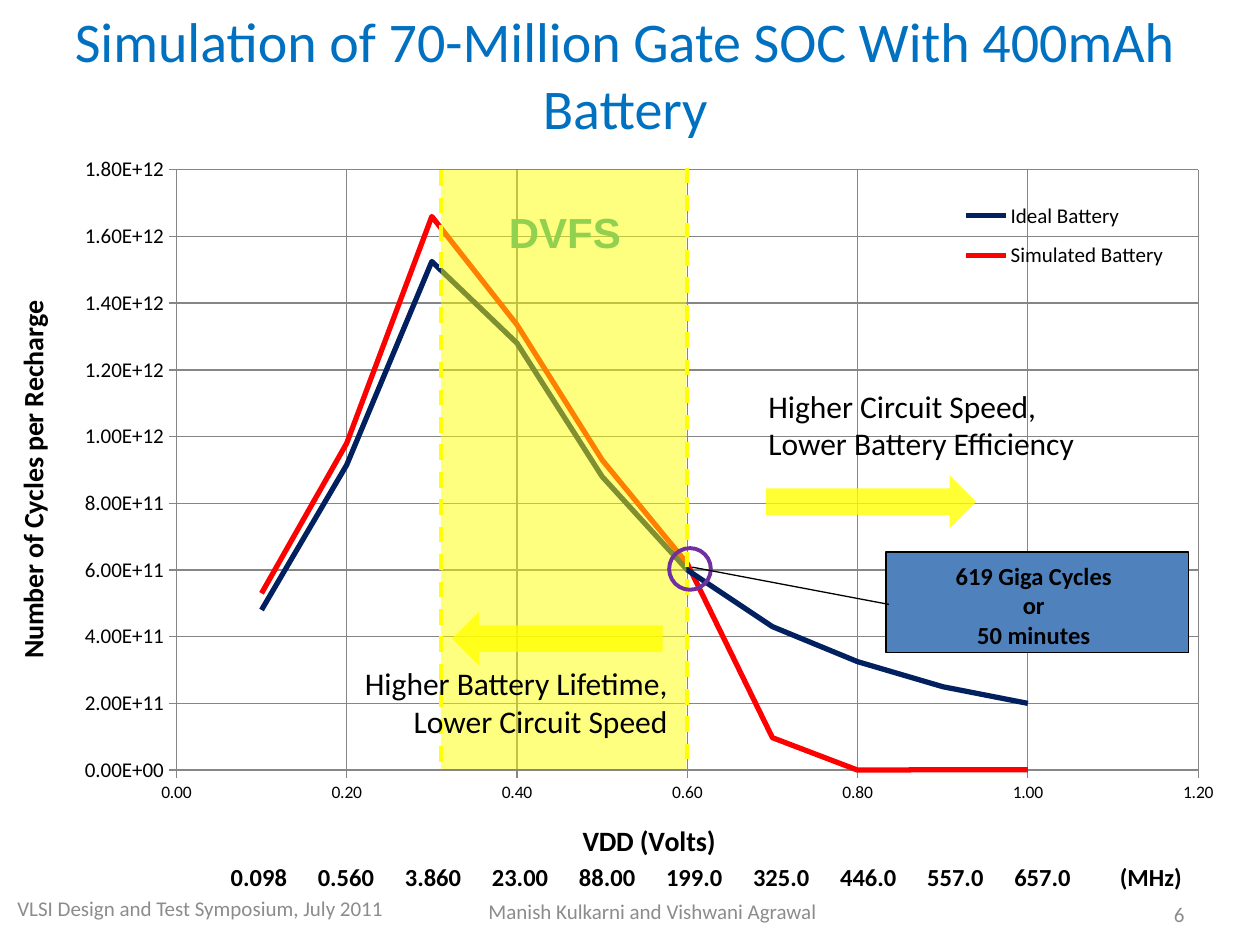
from lxml import etree
from pptx import Presentation, util as u
from pptx.chart.data import XyChartData
from pptx.dml.color import RGBColor
from pptx.enum import chart as charts, dml, shapes, text
from pptx.oxml.ns import qn

# Content: positions in cm, text sizes in points
VOLTS = [0.1, 0.2, 0.3, 0.4, 0.5, 0.6, 0.7, 0.8, 0.9, 1.0]
GIGA = 1e9
SERIES = [  # name, colour, giga cycles per recharge
    ("Ideal Battery", "002060", [480, 915, 1525, 1280, 880, 600, 430, 325, 250, 200]),
    ("Simulated Battery", "FF0000", [530, 980, 1660, 1335, 930, 619, 97, 0, 1, 1]),
]
FREQUENCIES = ["0.098", "0.560", "3.860", "23.00", "88.00", "199.0",
               "325.0", "446.0", "557.0", "657.0"]
FIRST_TAB, TAB_STEP, UNIT_TAB = 0.78, 1.755, 18.76

LEFT, CENTER, RIGHT = text.PP_ALIGN.LEFT, text.PP_ALIGN.CENTER, text.PP_ALIGN.RIGHT
GRAY, YELLOW, BLACK = "8C8C8C", "FFFF00", "000000"
FOOTERS = [  # text, place, alignment
    ("VLSI Design and Test Symposium, July 2011", (0.1, 17.68, 8.26, 1.27), LEFT),
    ("6", (18.2, 17.8, 5.93, 1.27), RIGHT),
    ("Manish Kulkarni and Vishwani Agrawal", (9.27, 17.86, 7.77, 1.02), CENTER),
]
TITLE = "Simulation of 70-Million Gate SOC With 400mAh Battery"
ZONE = (8.89, 3.43, 4.95, 12.07)
ZONE_EDGES = [(8.89, 3.43), (13.84, 3.38)]
ARROWS = [
    (shapes.MSO_SHAPE.RIGHT_ARROW, (15.44, 9.58, 4.24, 1.07)),
    (shapes.MSO_SHAPE.LEFT_ARROW, (9.12, 12.34, 4.24, 1.07)),
]
NOTES = [
    (["Higher Circuit Speed,", "Lower Battery Efficiency"], (15.24, 7.67, 7.82, 1.8), LEFT),
    (["Higher Battery Lifetime,", "Lower Circuit Speed"], (5.89, 13.26, 7.82, 1.8), RIGHT),
]
RESULT = ["619 Giga Cycles", "or", "50 minutes"]


def color(value):
    return RGBColor.from_string(value)


def place(position):
    return [u.Cm(length) for length in position]


def style(font, size, shade=BLACK, bold=False, name="Calibri"):
    font.size, font.bold, font.name = u.Pt(size), bold, name
    font.color.rgb = color(shade)


def add_text(lines, position, size, shade=BLACK, bold=False, align=LEFT,
             name="Calibri", anchor=text.MSO_ANCHOR.TOP):
    frame = page.shapes.add_textbox(*place(position)).text_frame
    frame.word_wrap = True
    frame.vertical_anchor = anchor
    for index, line in enumerate(lines):
        para = frame.paragraphs[0] if index == 0 else frame.add_paragraph()
        para.text = line
        para.alignment = align
        style(para.font, size, shade, bold, name)
    return frame


def add_shape(kind, position, fill=None, opacity=100, line=None, width=1):
    shape = page.shapes.add_shape(kind, *place(position))
    shape.shadow.inherit = False
    if fill:
        shape.fill.solid()
        shape.fill.fore_color.rgb = color(fill)
        if opacity < 100:
            node = shape.fill._xPr.find(".//" + qn("a:srgbClr"))
            etree.SubElement(node, qn("a:alpha"), val=str(opacity * 1000))
    else:
        shape.fill.background()
    if line:
        shape.line.color.rgb = color(line)
        shape.line.width = u.Pt(width)
    else:
        shape.line.fill.background()
    return shape


def set_layout(parent, x, y, w, h, inner=False):
    """Place a chart part by fractions of the chart's size."""
    for old in parent.findall(qn("c:layout")):
        parent.remove(old)
    layout = etree.Element(qn("c:layout"))
    manual = etree.SubElement(layout, qn("c:manualLayout"))
    values = [("layoutTarget", "inner")] if inner else []
    values += [("xMode", "edge"), ("yMode", "edge"), ("x", x), ("y", y), ("w", w), ("h", h)]
    for tag, value in values:
        etree.SubElement(manual, qn("c:" + tag), val=str(value))
    parent.insert(0 if inner else 1, layout)


def format_axis(axis, title, size, maximum, step, number_format):
    axis.minimum_scale, axis.maximum_scale, axis.major_unit = 0, maximum, step
    axis.has_major_gridlines = True
    axis.major_tick_mark = charts.XL_TICK_MARK.OUTSIDE
    for line in (axis.format.line, axis.major_gridlines.format.line):
        line.color.rgb = color("868686")
        line.width = u.Pt(0.75)
    labels = axis.tick_labels
    labels.number_format, labels.number_format_is_linked = number_format, False
    style(labels.font, size)
    para = axis.axis_title.text_frame.paragraphs[0]
    para.text = title
    style(para.font, 16, bold=True)


deck = Presentation()
deck.slide_width, deck.slide_height = u.Cm(25.4), u.Cm(19.05)
page = deck.slides.add_slide(deck.slide_layouts[6])

# Chart
data = XyChartData()
for name, shade, cycles in SERIES:
    series = data.add_series(name)
    for volt, cycle in zip(VOLTS, cycles):
        series.add_data_point(volt, cycle * GIGA)
chart = page.shapes.add_chart(charts.XL_CHART_TYPE.XY_SCATTER_SMOOTH_NO_MARKERS,
                              *place((0, 3, 25.4, 14.6)), data).chart
chart.has_title = False
style(chart.font, 10)
chart.plots[0].vary_by_categories = False
for series, (name, shade, cycles) in zip(chart.plots[0].series, SERIES):
    series.smooth = True
    series.marker.style = charts.XL_MARKER_STYLE.NONE
    series.format.line.color.rgb = color(shade)
    series.format.line.width = u.Pt(3)
format_axis(chart.category_axis, "VDD (Volts)", 10, 1.2, 0.2, "0.00")
format_axis(chart.value_axis, "Number of Cycles per Recharge", 12,
            1800 * GIGA, 200 * GIGA, "0.00E+00")
chart.has_legend = True
chart.legend.position = charts.XL_LEGEND_POSITION.RIGHT
chart.legend.include_in_layout = False
style(chart.legend.font, 12)
set_layout(chart.legend._element, 0.755, 0.055, 0.18, 0.13)
set_layout(chart._chartSpace.chart.plotArea, 0.14, 0.029, 0.811, 0.829, inner=True)

# Highlighted voltage zone with dashed edges
add_shape(shapes.MSO_SHAPE.RECTANGLE, ZONE, YELLOW, 50)
for x, top in ZONE_EDGES:
    edge = page.shapes.add_connector(shapes.MSO_CONNECTOR.STRAIGHT,
                                     *place((x, top, x, top + ZONE[3])))
    edge.line.color.rgb = color(YELLOW)
    edge.line.width = u.Pt(2.25)
    edge.line.dash_style = dml.MSO_LINE.DASH
    etree.SubElement(edge._element.spPr, qn("a:effectLst"))

# Trade-off arrows and notes
for kind, position in ARROWS:
    add_shape(kind, position, YELLOW, 80)
for lines, position, align in NOTES:
    add_text(lines, position, 18, align=align)
add_shape(shapes.MSO_SHAPE.OVAL, (13.49, 11.05, 0.84, 0.84), line="7030A0", width=2.25)

# Title and zone label
add_text([TITLE], (0.58, 0, 24.05, 1.57), 32, "0070C0", align=CENTER)
add_text(["DVFS"], (10.01, 4.04, 2.97, 1.3), 24, "92D050", True, name="Arial")

# Frequency row on centred tab stops
row = add_text(["\t" + "\t".join(FREQUENCIES + ["(MHz)"])],
               (4.19, 17.25, 19.99, 1.45), 14, bold=True)
stops = etree.SubElement(row.paragraphs[0]._p.get_or_add_pPr(), qn("a:tabLst"))
properties = stops.getparent()
properties.remove(stops)
properties.insert(0, stops)
for stop in [FIRST_TAB + TAB_STEP * i for i in range(len(FREQUENCIES))] + [UNIT_TAB]:
    etree.SubElement(stops, qn("a:tab"), pos=str(u.Cm(stop)), algn="ctr")

# Result callout
callout = add_shape(shapes.MSO_SHAPE.LINE_CALLOUT_1, (17.86, 11.13, 6.1, 2.03),
                    "4F81BD", line=BLACK, width=0.75)
for index, value in enumerate((0.52, 0.01, 0.15, -0.64)):
    callout.adjustments[index] = value
add_text(RESULT, (17.93, 11.18, 5.82, 2.06), 14, bold=True, align=CENTER)

# Footers
for line, position, align in FOOTERS:
    add_text([line], position, 12, GRAY, align=align, anchor=text.MSO_ANCHOR.MIDDLE)

deck.save("out.pptx")
